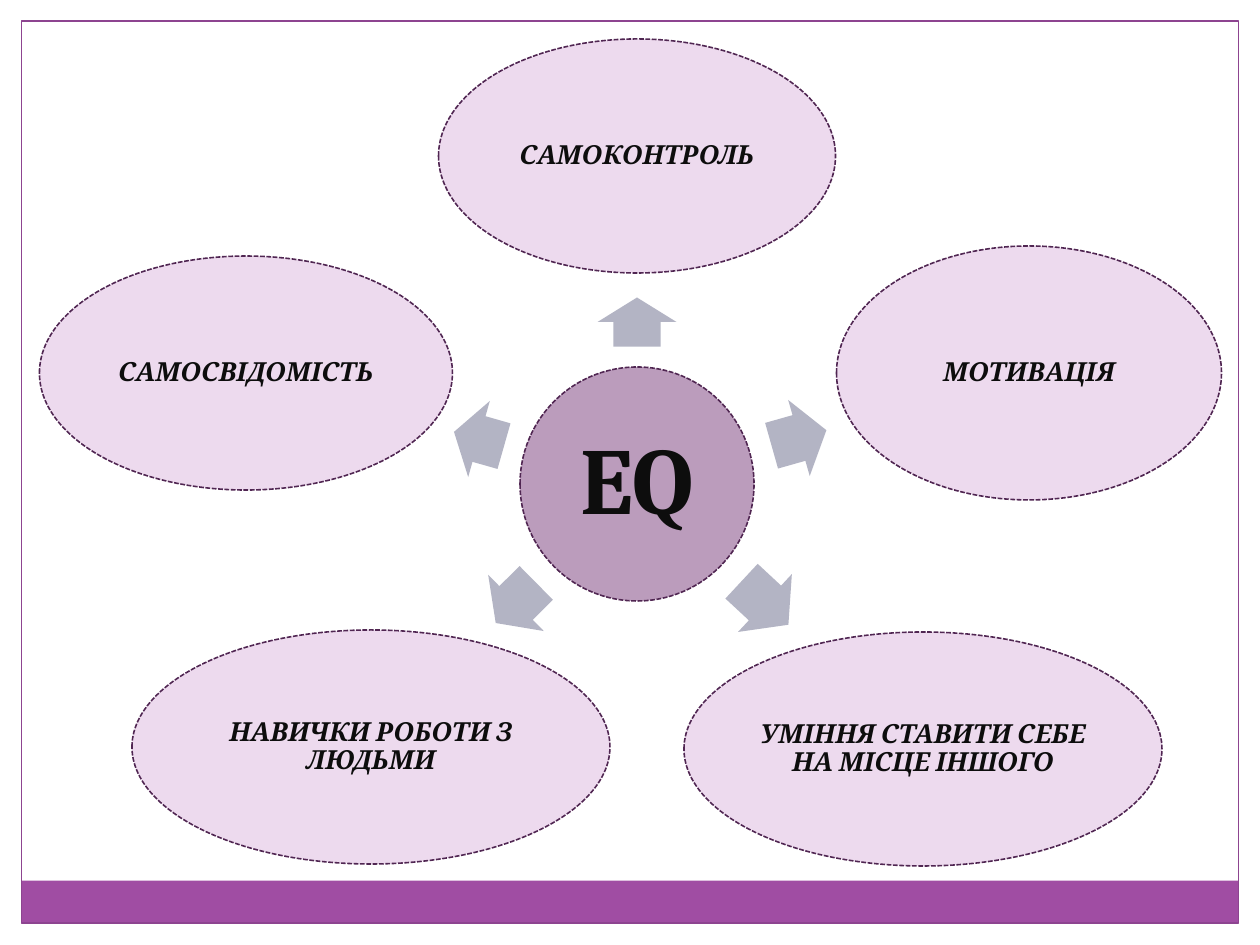
import dataclasses

import lxml.etree
import pptx
import pptx.dml.color
import pptx.enum.dml
import pptx.enum.shapes
import pptx.enum.text
import pptx.oxml.ns
import pptx.util

SHAPES = pptx.enum.shapes.MSO_SHAPE


@dataclasses.dataclass(frozen=True)
class Theme:
    font: str = "Cambria"
    ink: str = "0D0D0D"
    hub: str = "783A7A"
    skill: str = "EDDAEE"
    outline: str = "502652"
    arrow: str = "B3B4C4"
    band: str = "A04DA3"
    frame: str = "8D4490"
    hub_size: int = 54
    skill_size: int = 15


def px(length):
    return pptx.util.Emu(round(length * 914400 / 126))


def rgb(color):
    return pptx.dml.color.RGBColor.from_string(color)


def write(shape, text, *, font, size, color, italic=False, inset=3):
    frame = shape.text_frame
    frame.word_wrap = True
    frame.vertical_anchor = pptx.enum.text.MSO_ANCHOR.MIDDLE
    frame.margin_left = frame.margin_right = px(inset)
    frame.margin_top = frame.margin_bottom = px(inset)
    paragraph = frame.paragraphs[0]
    paragraph.alignment = pptx.enum.text.PP_ALIGN.CENTER
    paragraph.line_spacing = 0.9
    run = paragraph.add_run()
    run.text = text
    run.font.name = font
    run.font.size = pptx.util.Pt(size)
    run.font.bold = True
    run.font.italic = italic
    run.font.color.rgb = rgb(color)


class Diagram:
    def __init__(self, slide, theme):
        self.slide = slide
        self.theme = theme

    def centred(self, kind, x, y, width, height, fill=None, line=None, weight=0.75):
        shape = self.slide.shapes.add_shape(
            kind, px(x - width / 2), px(y - height / 2), px(width), px(height))
        shape.shadow.inherit = False
        if fill:
            shape.fill.solid()
            shape.fill.fore_color.rgb = rgb(fill)
        else:
            shape.fill.background()
        if line:
            shape.line.color.rgb = rgb(line)
            shape.line.width = pptx.util.Pt(weight)
        else:
            shape.line.fill.background()
        return shape

    def border(self):
        self.centred(SHAPES.RECTANGLE, 630, 902, 1217, 43, fill=self.theme.band)
        self.centred(SHAPES.RECTANGLE, 630, 472, 1217, 902, line=self.theme.frame)

    def oval(self, x, y, width, height, fill):
        oval = self.centred(SHAPES.OVAL, x, y, width, height, fill, self.theme.outline, 0.9)
        oval.line.dash_style = pptx.enum.dml.MSO_LINE.SQUARE_DOT
        return oval

    def hub(self, text, x, y, diameter):
        hub = self.oval(x, y, diameter, diameter, self.theme.hub)
        color = hub.fill._xPr.find(".//" + pptx.oxml.ns.qn("a:srgbClr"))
        lxml.etree.SubElement(color, pptx.oxml.ns.qn("a:alpha"), val="50000")
        write(hub, text, font=self.theme.font, size=self.theme.hub_size,
              color=self.theme.ink, inset=9)

    def skill(self, text, x, y, width, height):
        write(self.oval(x, y, width, height, self.theme.skill), text,
              font=self.theme.font, size=self.theme.skill_size,
              color=self.theme.ink, italic=True)

    def arrow(self, x, y, length, angle):
        arrow = self.centred(SHAPES.RIGHT_ARROW, x, y, length, 79, self.theme.arrow)
        arrow.adjustments[0] = 0.6
        arrow.adjustments[1] = 0.5
        arrow.rotation = angle


SKILLS = [
    ("САМОКОНТРОЛЬ", (637, 156, 397, 234), (637, 322, 49, 270)),
    ("МОТИВАЦІЯ", (1029, 373, 385, 254), (799, 438, 57, 344.2)),
    ("УМІННЯ СТАВИТИ СЕБЕ НА МІСЦЕ ІНШОГО", (923, 749, 478, 234), (765, 603, 64, 42.9)),
    ("НАВИЧКИ РОБОТИ З ЛЮДЬМИ", (371, 747, 478, 234), (516, 603, 57, 135.3)),
    ("САМОСВІДОМІСТЬ", (246, 373, 413, 234), (479, 439, 52, 195.9)),
]


def main():
    deck = pptx.Presentation()
    deck.slide_width, deck.slide_height = px(1260), px(945)
    diagram = Diagram(deck.slides.add_slide(deck.slide_layouts[6]), Theme())
    diagram.border()
    diagram.hub("EQ", 637, 484, 234)
    for name, oval, arrow in SKILLS:
        diagram.arrow(*arrow)
        diagram.skill(name, *oval)
    deck.save("out.pptx")


if __name__ == "__main__":
    main()
